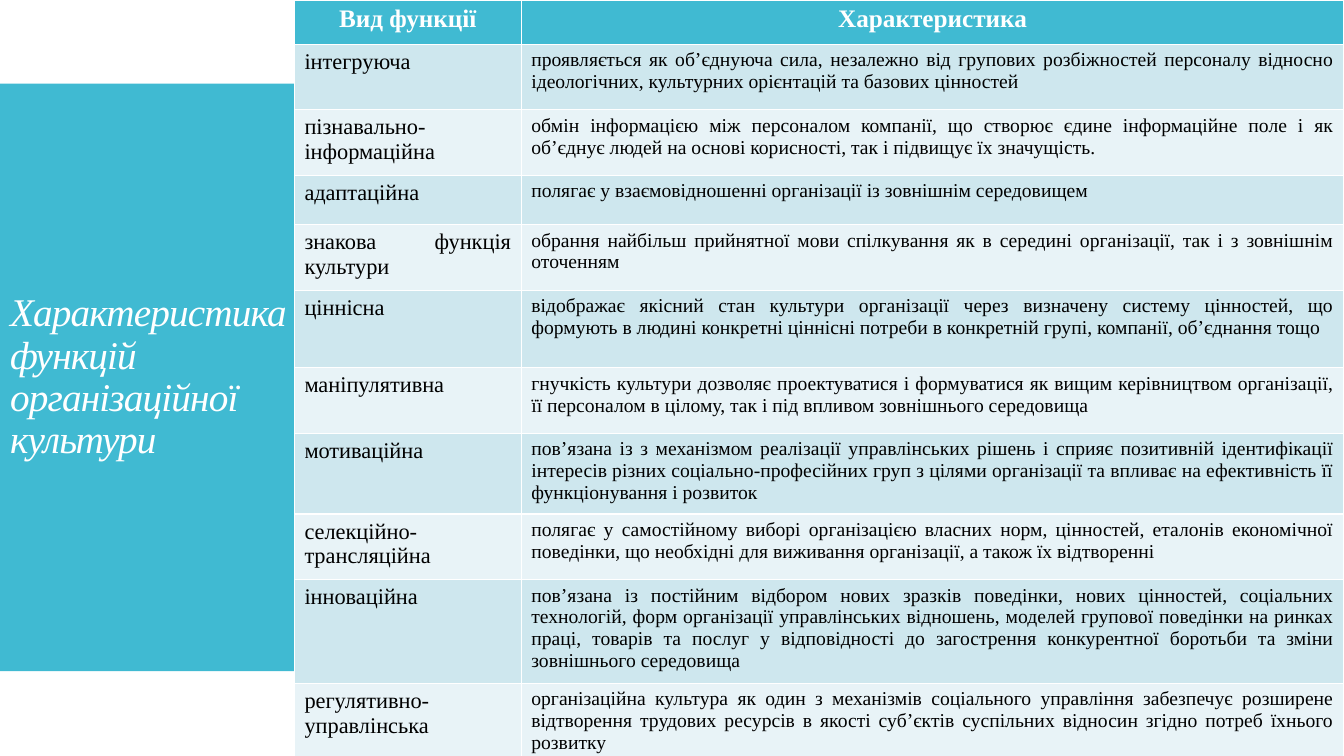
from dataclasses import dataclass

from pptx import Presentation
from pptx.dml.color import RGBColor
from pptx.enum.shapes import MSO_SHAPE
from pptx.enum.text import MSO_ANCHOR, MSO_AUTO_SIZE, PP_ALIGN
from pptx.util import Inches, Pt


@dataclass(frozen=True)
class Theme:
    font: str = "Times New Roman"
    accent: str = "40BAD2"
    odd_row: str = "CEE7EE"
    even_row: str = "E8F3F7"
    light: str = "FFFFFF"
    dark: str = "000000"
    title_size: int = 28
    header_size: int = 18
    name_size: int = 16
    body_size: int = 14


THEME = Theme()

TITLE = "Характеристика функцій організаційної культури"
HEADERS = ("Вид функції", "Характеристика")
COLUMN_WIDTHS = (2.25, 8.16)
HEADER_HEIGHT = 0.44

# Row height, function, description
FUNCTIONS = [
    (0.65, "інтегруюча",
     "проявляється як об’єднуюча сила, незалежно від групових розбіжностей персоналу "
     "відносно ідеологічних, культурних орієнтацій та базових цінностей"),
    (0.65, "пізнавально-інформаційна",
     "обмін інформацією між персоналом компанії, що створює єдине інформаційне поле і як "
     "об’єднує людей на основі корисності, так і підвищує їх значущість."),
    (0.49, "адаптаційна",
     "полягає у взаємовідношенні організації із зовнішнім середовищем"),
    (0.65, "знакова функція культури",
     "обрання найбільш прийнятної мови спілкування як в середині організації, так і з "
     "зовнішнім оточенням"),
    (0.77, "ціннісна",
     "відображає якісний стан культури організації через визначену систему цінностей, що "
     "формують в людині конкретні ціннісні потреби в конкретній групі, компанії, "
     "об’єднання тощо"),
    (0.65, "маніпулятивна",
     "гнучкість культури дозволяє проектуватися і формуватися як вищим керівництвом "
     "організації, її персоналом в цілому, так і під впливом зовнішнього середовища"),
    (0.8, "мотиваційна",
     "пов’язана із з механізмом реалізації управлінських рішень і сприяє позитивній "
     "ідентифікації інтересів різних соціально-професійних груп з цілями організації та "
     "впливає на ефективність її функціонування і розвиток"),
    (0.65, "селекційно-трансляційна",
     "полягає у самостійному виборі організацією власних норм, цінностей, еталонів "
     "економічної поведінки, що необхідні для виживання організації, а також їх відтворенні"),
    (1.03, "інноваційна",
     "пов’язана із постійним відбором нових зразків поведінки, нових цінностей, соціальних "
     "технологій, форм організації управлінських відношень, моделей групової поведінки на "
     "ринках праці, товарів та послуг у відповідності до загострення конкурентної боротьби "
     "та зміни зовнішнього середовища"),
    (0.8, "регулятивно-управлінська",
     "організаційна культура як один з механізмів соціального управління забезпечує "
     "розширене відтворення трудових ресурсів в якості суб’єктів суспільних відносин "
     "згідно потреб їхнього розвитку"),
]


def write_text(frame, text, size, color=THEME.dark, align=PP_ALIGN.JUSTIFY,
               bold=False, italic=False, line_spacing=None, tracking=None):
    paragraph = frame.paragraphs[0]
    paragraph.alignment = align
    if line_spacing:
        paragraph.line_spacing = line_spacing
    run = paragraph.add_run()
    run.text = text
    font = run.font
    font.name, font.size = THEME.font, Pt(size)
    font.bold, font.italic = bold, italic
    font.color.rgb = RGBColor.from_string(color)
    if tracking:
        run.font._element.set("spc", str(round(tracking * 100)))


def add_title(slide):
    title = slide.shapes.title
    title.left, title.top = Inches(0), Inches(1.23)
    title.width, title.height = Inches(3.71), Inches(5.03)
    frame = title.text_frame
    frame.word_wrap = True
    frame.auto_size = MSO_AUTO_SIZE.NONE
    frame.vertical_anchor = MSO_ANCHOR.MIDDLE
    write_text(frame, TITLE, THEME.title_size, color=THEME.light, align=PP_ALIGN.LEFT,
               italic=True, line_spacing=0.9, tracking=-0.6)
    return title


def add_panel_behind(slide, title):
    panel = slide.shapes.add_shape(MSO_SHAPE.RECTANGLE, Inches(0), Inches(0.83),
                                   Inches(3.77), Inches(5.83))
    panel.shadow.inherit = False
    panel.fill.solid()
    panel.fill.fore_color.rgb = RGBColor.from_string(THEME.accent)
    panel.line.fill.background()
    title.element.addprevious(panel.element)


def fill_cell(cell, text, fill, size, **text_format):
    cell.fill.solid()
    cell.fill.fore_color.rgb = RGBColor.from_string(fill)
    write_text(cell.text_frame, text, size, **text_format)


def add_functions_table(slide):
    heights = [HEADER_HEIGHT] + [height for height, _, _ in FUNCTIONS]
    # The default table style supplies the white rules
    table = slide.shapes.add_table(len(heights), len(HEADERS), Inches(2.92), Inches(0),
                                   Inches(sum(COLUMN_WIDTHS)), Inches(sum(heights))).table
    for column, width in zip(table.columns, COLUMN_WIDTHS):
        column.width = Inches(width)
    for row, height in zip(table.rows, heights):
        row.height = Inches(height)

    # Header row
    for index, header in enumerate(HEADERS):
        fill_cell(table.cell(0, index), header, THEME.accent, THEME.header_size,
                  color=THEME.light, align=PP_ALIGN.CENTER, bold=True)

    # Function rows in alternating tints
    for index, (_, name, description) in enumerate(FUNCTIONS, start=1):
        fill = THEME.odd_row if index % 2 else THEME.even_row
        fill_cell(table.cell(index, 0), name, fill, THEME.name_size)
        fill_cell(table.cell(index, 1), description, fill, THEME.body_size)


def main():
    presentation = Presentation()
    presentation.slide_width, presentation.slide_height = Inches(13.33), Inches(7.5)
    slide = presentation.slides.add_slide(presentation.slide_layouts.get_by_name("Title Only"))
    title = add_title(slide)
    add_panel_behind(slide, title)
    add_functions_table(slide)
    presentation.save("out.pptx")


if __name__ == "__main__":
    main()
